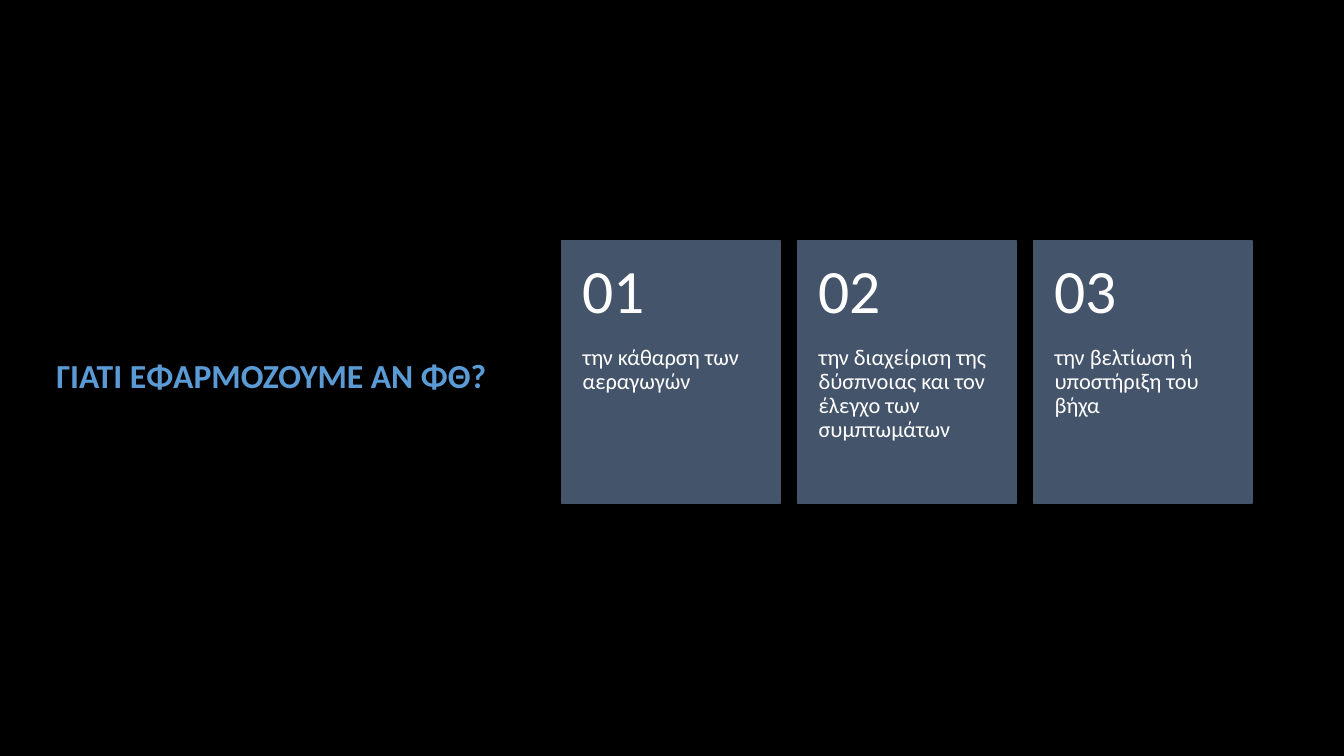
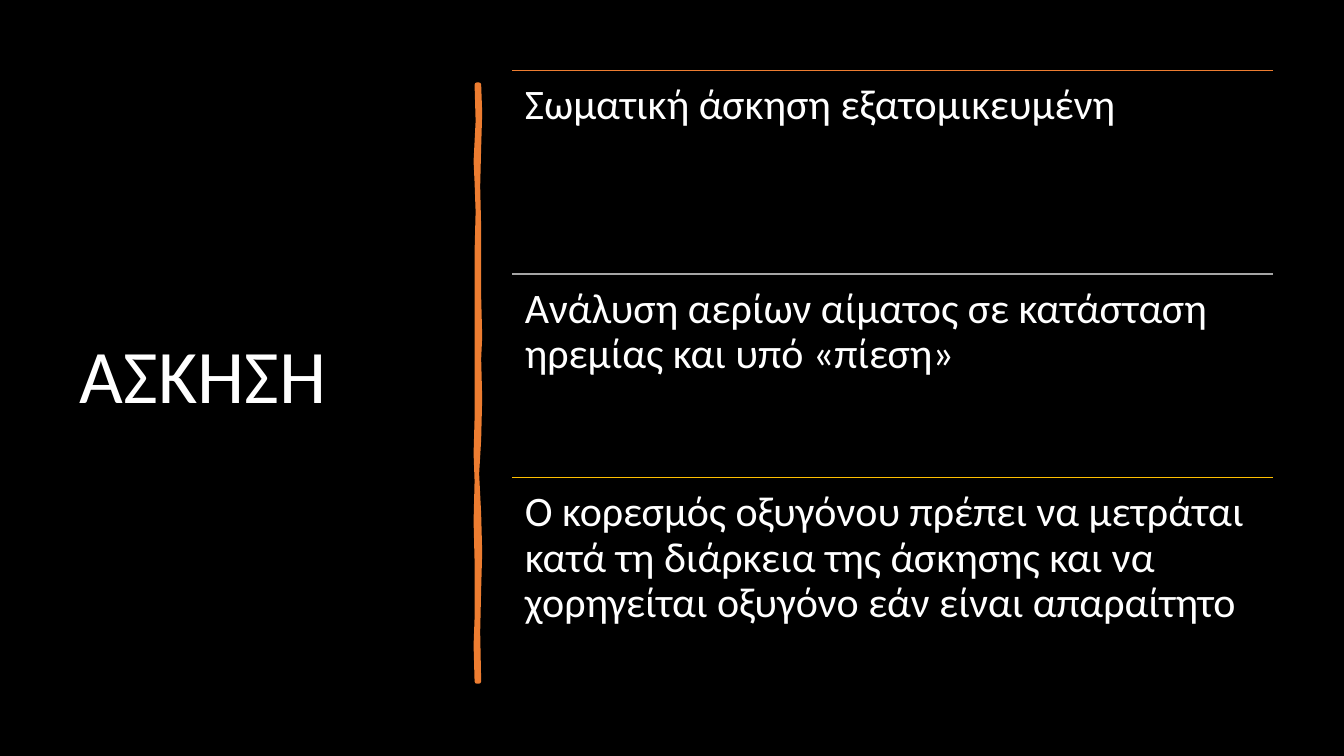
from lxml import etree
from pptx import Presentation
from pptx.dml.color import RGBColor
from pptx.enum import shapes, text
from pptx.oxml.ns import qn
from pptx.util import Inches, Pt

COLORS = {"black": "000000", "white": "FFFFFF", "blue": "5B9BD5", "slate": "44546A",
          "orange": "ED7D31", "grey": "A5A5A5", "gold": "FFC000"}
RGB = {name: RGBColor.from_string(value) for name, value in COLORS.items()}
TOP, MIDDLE = text.MSO_ANCHOR.TOP, text.MSO_ANCHOR.MIDDLE


def write(shape, wording, size, color="white", bold=False, anchor=TOP, insets=(0.1, 0.05, 0.1, 0.05)):
    """Fill a shape with one left-aligned paragraph; insets are left, top, right, bottom."""
    frame = shape.text_frame
    frame.text = wording
    sides = ("margin_left", "margin_top", "margin_right", "margin_bottom")
    frame_format = {"word_wrap": True, "auto_size": text.MSO_AUTO_SIZE.NONE,
                    "vertical_anchor": anchor, **dict(zip(sides, map(Inches, insets)))}
    paragraph = frame.paragraphs[0]
    paragraph_format = {"alignment": text.PP_ALIGN.LEFT, "line_spacing": 0.9}
    font_format = {"name": "Calibri", "size": Pt(size), "bold": bold}
    for target, values in ((frame, frame_format), (paragraph, paragraph_format),
                           (paragraph.runs[0].font, font_format)):
        for attribute, value in values.items():
            setattr(target, attribute, value)
    paragraph.runs[0].font.color.rgb = RGB[color]


def add_titled_slide(wording, box, size, **style):
    """Add a slide with its title placed in box: left, top, width, height."""
    slide = prs.slides.add_slide(prs.slide_layouts.get_by_name("Title Only"))
    title = slide.shapes.title
    for attribute, value in zip(("left", "top", "width", "height"), box):
        setattr(title, attribute, Inches(value))
    write(title, wording, size, anchor=MIDDLE, **style)
    return slide


prs = Presentation()
prs.slide_width, prs.slide_height = Inches(13.33), Inches(7.5)
background = prs.slide_master.background.fill
background.solid()
background.fore_color.rgb = RGB["black"]

# Slide 1: three numbered reasons
reasons_slide = add_titled_slide("ΓΙΑΤΙ ΕΦΑΡΜΟΖΟΥΜΕ ΑΝ ΦΘ?", (0.46, 2.33, 4.85, 2.84), 24,
                                 color="blue", bold=True)
reasons = ["την κάθαρση των αεραγωγών",
           "την διαχείριση της δύσπνοιας και τον έλεγχο των συμπτωμάτων",
           "την βελτίωση ή υποστήριξη του βήχα"]
card_left, card_top, card_width, card_height = 5.57, 2.39, 2.17, 2.6
card_pitch, number_height = 2.34, 1.04
for index, reason in enumerate(reasons):
    left = Inches(card_left + index * card_pitch)
    card = reasons_slide.shapes.add_shape(shapes.MSO_SHAPE.RECTANGLE, left, Inches(card_top),
                                          Inches(card_width), Inches(card_height))
    card.shadow.inherit = False
    card.fill.solid()
    card.fill.fore_color.rgb = card.line.color.rgb = RGB["slate"]
    card.line.width = Pt(1)
    label = reasons_slide.shapes.add_textbox(left, Inches(card_top + number_height), Inches(card_width),
                                             Inches(card_height - number_height))
    write(label, reason, 16, insets=(0.21, 0, 0.21, 0.36))
    number = reasons_slide.shapes.add_textbox(left, Inches(card_top), Inches(card_width),
                                              Inches(number_height))
    write(number, f"{index + 1:02}", 44, anchor=MIDDLE, insets=(0.21, 0.18, 0.21, 0.18))

# Slide 2: exercise guidance
exercise_slide = add_titled_slide("ΑΣΚΗΣΗ", (0.69, 0.7, 3.74, 6.11), 54)

# Hand-drawn divider: down the right edge and up the left
divider_outline = [
    (4.75, 0.84), (4.76, 1.12), (4.75, 1.46), (4.74, 1.85), (4.75, 2.26), (4.75, 2.94),
    (4.76, 3.34), (4.75, 3.56), (4.76, 3.95), (4.75, 4.36), (4.73, 4.7), (4.75, 5.1),
    (4.76, 5.48), (4.75, 5.84), (4.74, 6.27), (4.75, 6.76),
    (4.73, 6.76), (4.72, 6.4), (4.73, 6.13), (4.73, 5.57), (4.72, 5.17), (4.73, 4.77),
    (4.72, 4.5), (4.73, 4.15), (4.73, 3.35), (4.73, 2.5), (4.74, 2.1), (4.73, 1.81),
    (4.72, 1.6), (4.74, 1.2), (4.73, 0.84),
]
points = [(Inches(x), Inches(y)) for x, y in divider_outline]
builder = exercise_slide.shapes.build_freeform(*points[0])
builder.add_line_segments(points[1:], close=True)
divider = builder.convert_to_shape()
divider.shadow.inherit = False
divider.fill.solid()
divider.fill.fore_color.rgb = divider.line.color.rgb = RGB["orange"]
divider.line.width = Pt(3.25)
etree.SubElement(divider._element.spPr.find(qn("a:ln")), qn("a:round"))

# Ruled rows
advice = [("orange", "Σωματική άσκηση εξατομικευμένη"),
          ("grey", "Ανάλυση αερίων αίματος σε κατάσταση ηρεμίας και υπό «πίεση»"),
          ("gold", "Ο κορεσμός οξυγόνου πρέπει να μετράται κατά τη διάρκεια της άσκησης "
                   "και να χορηγείται οξυγόνο εάν είναι απαραίτητο")]
row_left, row_top, row_width, row_height = 5.08, 0.7, 7.55, 2.02
row_inset = 1 / 8
for index, (color, wording) in enumerate(advice):
    top = Inches(row_top + index * row_height)
    rule = exercise_slide.shapes.add_connector(shapes.MSO_CONNECTOR.STRAIGHT, Inches(row_left), top,
                                               Inches(row_left + row_width), top)
    rule.line.color.rgb = RGB[color]
    rule.line.width = Pt(1)
    etree.SubElement(rule._element.spPr, qn("a:effectLst"))
    row = exercise_slide.shapes.add_textbox(Inches(row_left), top, Inches(row_width), Inches(row_height))
    write(row, wording, 30, insets=(row_inset,) * 4)

prs.save("out.pptx")
